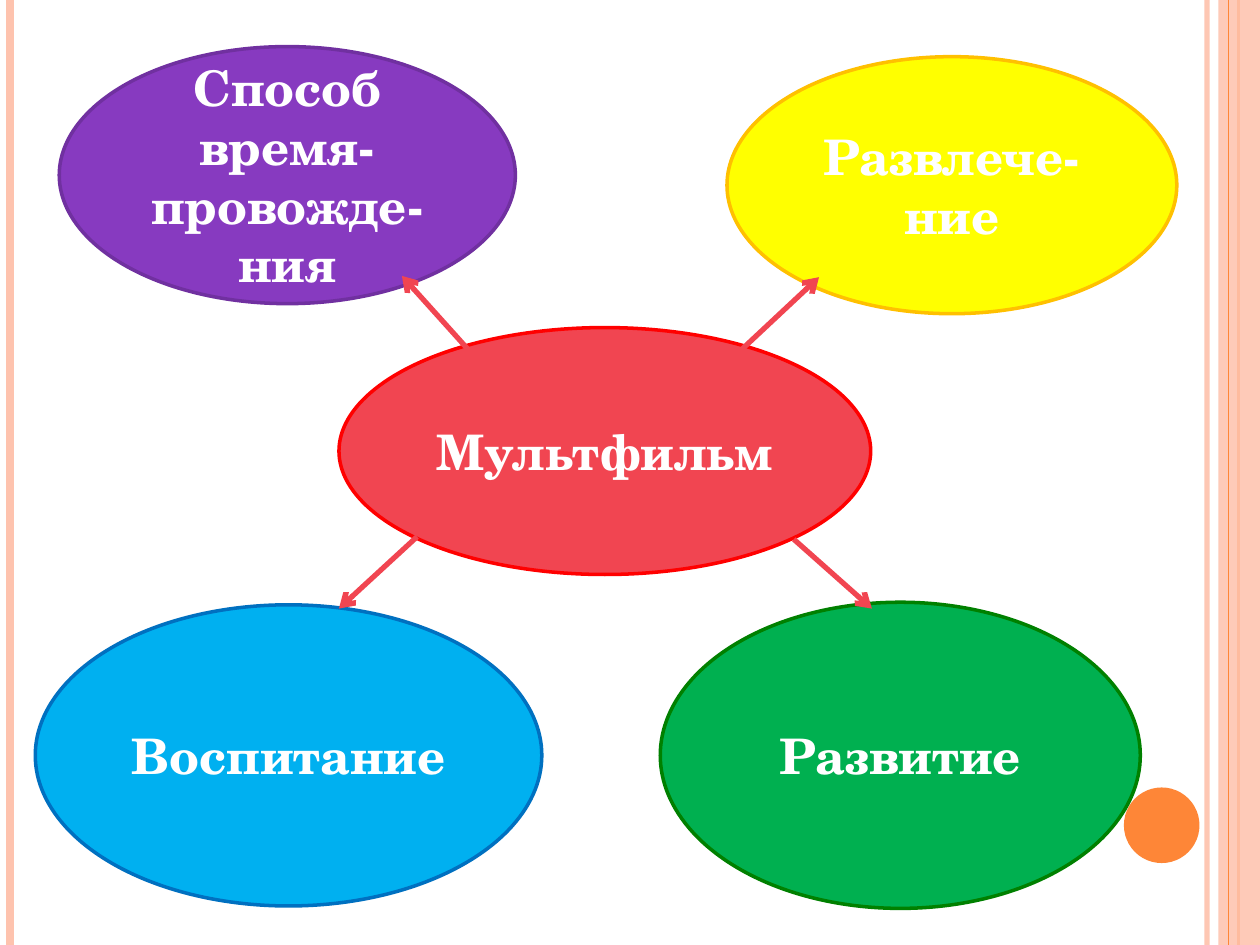
from lxml.etree import SubElement
from pptx import Presentation
from pptx.dml.color import RGBColor
from pptx.enum.shapes import MSO_CONNECTOR as Connector, MSO_SHAPE as Shape
from pptx.enum.text import MSO_ANCHOR as Anchor, PP_ALIGN as Align
from pptx.oxml.ns import qn
from pptx.util import Inches, Pt

FONT = "TeX Gyre Schola"
PEACH, ORANGE, CORAL, WHITE = "FEC3AE", "FE8637", "F14551", "FFFFFF"

EDGE_LINES = [
    (9.58, PEACH, 3, 93),
    (0.08, PEACH, 4.5, 100),
    (9.83, ORANGE, 1.5, 100),
]
TOPICS = [
    ("Мультфильм", (2.69, 2.6, 4.22, 1.96), CORAL, "FF0000"),
    ("Способ время-провожде-ния", (0.47, 0.37, 3.62, 2.04), "873AC0", "7030A0"),
    ("Развлече-ние", (5.77, 0.45, 3.57, 2.04), "FFFF00", "FFC000"),
    ("Воспитание", (0.28, 4.8, 4.02, 2.39), "00B0F0", "0070C0"),
    ("Развитие", (5.24, 4.78, 3.81, 2.43), "00B050", "008000"),
]
ARROWS = [
    ((3.73, 2.79), (3.19, 2.19)),
    ((5.88, 2.78), (6.5, 2.2)),
    ((3.31, 4.26), (2.69, 4.83)),
    ((6.3, 4.28), (6.92, 4.83)),
]


def paint(color_format, color, opacity=100):
    """Make a fill solid in a hex colour with an opacity in percent."""
    color_format.solid()
    color_format.fore_color.rgb = RGBColor.from_string(color)
    if opacity < 100:
        solid = color_format.fore_color._xFill
        SubElement(solid[0], qn("a:alpha"), val=str(opacity * 1000))


def add_figure(slide, kind, box, fill, outline=None, opacity=100):
    """Add a filled preset shape with an optional 2 pt outline."""
    figure = slide.shapes.add_shape(kind, *map(Inches, box))
    figure.shadow.inherit = False
    paint(figure.fill, fill, opacity)
    if outline:
        paint(figure.line.fill, outline)
        figure.line.width = Pt(2)
    else:
        figure.line.fill.background()
    return figure


def add_line(slide, start, end, color, width, opacity=100):
    """Add a straight line without a shadow."""
    line = slide.shapes.add_connector(
        Connector.STRAIGHT, *map(Inches, (*start, *end)))
    paint(line.line.fill, color, opacity)
    line.line.width = Pt(width)
    SubElement(line._element.spPr, qn("a:effectLst"))
    return line


def add_frame(slide, left, top, width, height):
    """Draw the edge lines, the right band and the corner disc."""
    def edge(x, color, weight, opacity):
        """Draw one full-height line."""
        add_line(slide, (left + x, top), (left + x, top + height),
                 color, weight, opacity)

    for edge_line in EDGE_LINES:
        edge(*edge_line)
    band = 0.33
    add_figure(slide, Shape.RECTANGLE,
               (left + width - band, top, band, height), PEACH, opacity=87)
    edge(9.75, ORANGE, 0.75, 100)
    add_figure(slide, Shape.OVAL, (left + 8.92, top + 6.25, 0.6, 0.6), ORANGE)


def add_topic(slide, label, box, fill, outline):
    """Add one labelled ellipse."""
    topic = add_figure(slide, Shape.OVAL, box, fill, outline)
    frame = topic.text_frame
    frame.word_wrap = True
    frame.vertical_anchor = Anchor.MIDDLE
    paragraph = frame.paragraphs[0]
    paragraph.alignment = Align.CENTER
    run = paragraph.add_run()
    run.text = label
    run.font.name = FONT
    run.font.size = Pt(28)
    run.font.bold = True
    run.font.color.rgb = RGBColor.from_string(WHITE)


def add_mind_map(slide, left, top):
    """Draw the central topic, its four branches and the arrows."""
    for label, (x, y, width, height), fill, outline in TOPICS:
        add_topic(slide, label, (left + x, top + y, width, height),
                  fill, outline)
    for start, end in ARROWS:
        arrow = add_line(slide, (left + start[0], top + start[1]),
                         (left + end[0], top + end[1]), CORAL, 3)
        SubElement(arrow.line._get_or_add_ln(), qn("a:tailEnd"), type="arrow")


def main():
    """Build and save the slide."""
    deck = Presentation()
    deck.slide_width, deck.slide_height = Inches(10), Inches(7.5)
    slide = deck.slides.add_slide(deck.slide_layouts[6])
    paint(slide.background.fill, WHITE)
    add_frame(slide, 0, 0, 10, 7.5)
    add_mind_map(slide, 0, 0)
    deck.save("out.pptx")


if __name__ == "__main__":
    main()
